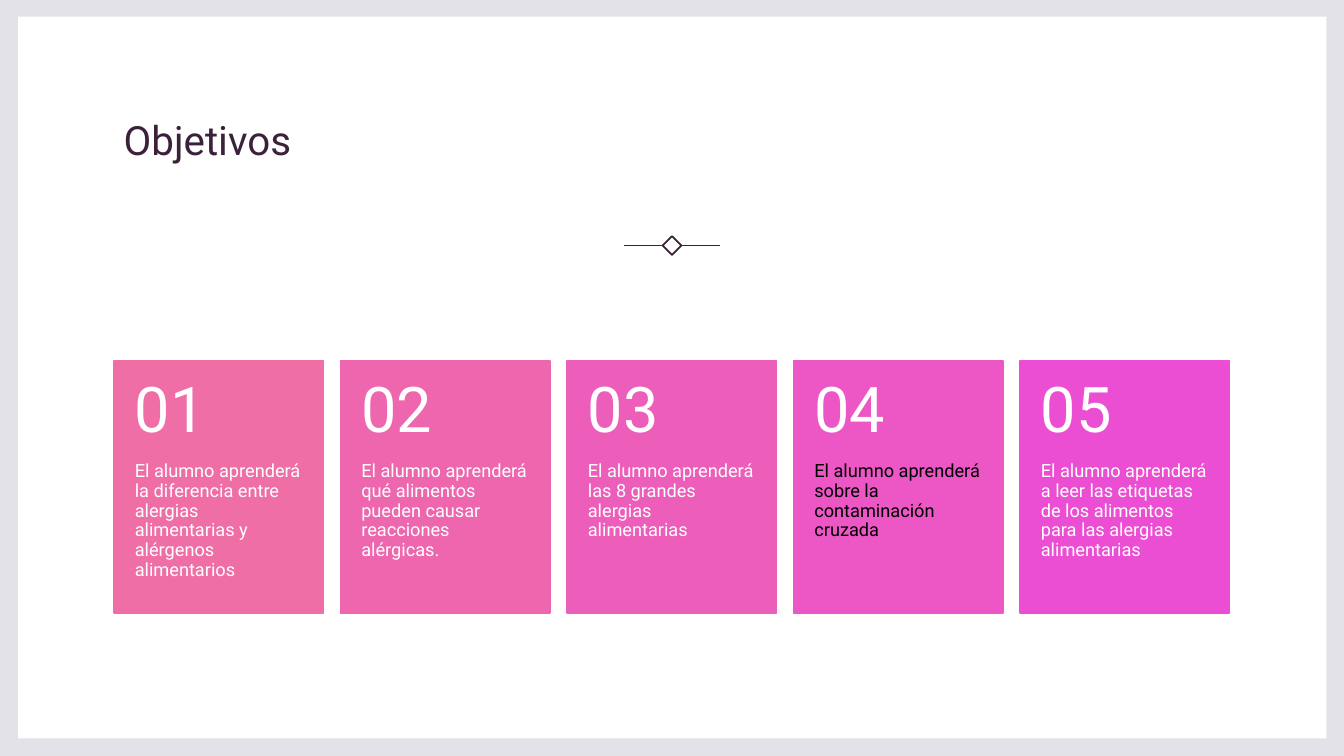
"""Builds the learning objectives slide with five numbered cards."""
from lxml import etree
from pptx import Presentation
from pptx import util as u
from pptx.dml.color import RGBColor
from pptx.enum import shapes, text
from pptx.oxml.ns import qn

TITLE = "Objetivos"
OBJECTIVES = [
    ("El alumno aprenderá la diferencia entre alergias alimentarias y alérgenos alimentarios", "EE6EA5", "white"),
    ("El alumno aprenderá qué alimentos pueden causar reacciones alérgicas.", "ED66AE", "white"),
    ("El alumno aprenderá las 8 grandes alergias alimentarias", "EC5EB9", "white"),
    ("El alumno aprenderá sobre la contaminación cruzada", "EC56C5", "black"),
    ("El alumno aprenderá a leer las etiquetas de los alimentos para las alergias alimentarias", "EB4ED2", "white"),
]
THEME = {
    "font": "Roboto", "ink": "3B213A", "frame": "E3E2E8", "white": "FFFFFF", "black": "000000",
    "title": 28.8, "number": 45, "body": 13, "rule": 1.25,
}
WIDTH, HEIGHT = 960, 540
PANEL = (13, 12, 934.5, 515.5)
TITLE_BOX = (81.3, 75.6, 797.4, 81.4)
CARD_LEFT, CARD_TOP, CARD_W, CARD_H, PITCH = 81.3, 258, 149.8, 180, 161.8
NUMBER_H = 72
MID_X, MID_Y, DIAMOND, RULE_GAP, RULE_END = 480, 175.4, 9.5, 6.8, 34.2


def color(value):
    return RGBColor.from_string(THEME.get(value, value))


def add_rect(s, box, fill=None, line=None, width=1):
    sp = s.shapes.add_shape(shapes.MSO_SHAPE.RECTANGLE, *map(u.Pt, box))
    sp.shadow.inherit = False
    if fill:
        sp.fill.solid()
        sp.fill.fore_color.rgb = color(fill)
    else:
        sp.fill.background()
    if line:
        sp.line.color.rgb = color(line)
        sp.line.width = u.Pt(width)
    else:
        sp.line.fill.background()
    return sp


def add_text(s, box, words, size, ink, insets, spacing, anchor=text.MSO_ANCHOR.TOP):
    tf = s.shapes.add_textbox(*map(u.Pt, box)).text_frame
    tf.word_wrap = True
    tf.vertical_anchor = anchor
    tf.margin_left, tf.margin_top, tf.margin_right, tf.margin_bottom = map(u.Pt, insets)
    p = tf.paragraphs[0]
    p.text = words
    p.line_spacing = spacing
    p.font.name = THEME["font"]
    p.font.size = u.Pt(THEME[size])
    p.font.color.rgb = color(ink)


def add_divider(s):
    add_rect(s, (MID_X - DIAMOND / 2, MID_Y - DIAMOND / 2, DIAMOND, DIAMOND),
             line="ink", width=THEME["rule"]).rotation = 45
    for side in (1, -1):
        rule = s.shapes.add_connector(
            shapes.MSO_CONNECTOR.STRAIGHT,
            u.Pt(MID_X + side * RULE_GAP), u.Pt(MID_Y), u.Pt(MID_X + side * RULE_END), u.Pt(MID_Y))
        rule.line.color.rgb = color("ink")
        rule.line.width = u.Pt(THEME["rule"])
        etree.SubElement(rule._element.spPr, qn("a:effectLst"))


def add_card(s, i, words, fill, ink):
    left = CARD_LEFT + i * PITCH
    add_rect(s, (left, CARD_TOP, CARD_W, CARD_H), fill, fill)
    add_text(s, (left, CARD_TOP + NUMBER_H, CARD_W, CARD_H - NUMBER_H), words,
             "body", ink, (15, 0, 15, 26), 0.9)
    add_text(s, (left, CARD_TOP, CARD_W, NUMBER_H), f"{i + 1:02}",
             "number", "white", (15, 13, 15, 13), 0.9, text.MSO_ANCHOR.MIDDLE)


def main():
    prs = Presentation()
    prs.slide_width, prs.slide_height = u.Pt(WIDTH), u.Pt(HEIGHT)
    s = prs.slides.add_slide(prs.slide_layouts[6])
    add_rect(s, (0, 0, WIDTH, HEIGHT), "frame")
    add_rect(s, PANEL, "white")
    add_text(s, TITLE_BOX, TITLE, "title", "ink", (7.2, 3.6, 7.2, 3.6), 1.1)
    add_divider(s)
    for i, objective in enumerate(OBJECTIVES):
        add_card(s, i, *objective)
    prs.save("out.pptx")


if __name__ == "__main__":
    main()
